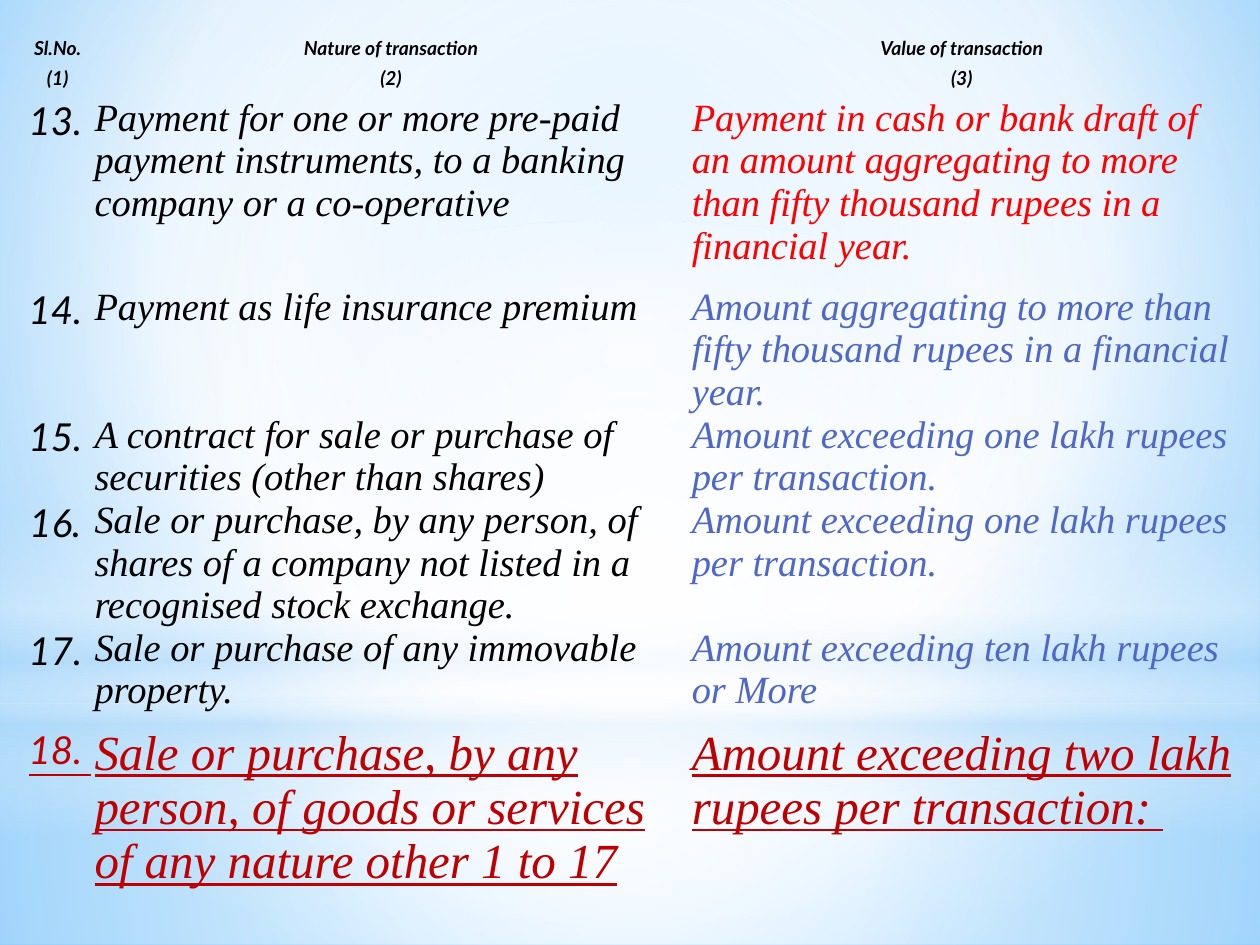
import pptx
import pptx.dml.color
import pptx.enum.shapes
import pptx.enum.text
import pptx.oxml
import pptx.oxml.ns
import pptx.util

Pt = pptx.util.Pt
WIDE, HIGH = 720, 540
SANS, SERIF = "Lato", "Times New Roman"
BLACK, RED, BLUE, DARK = "000000", "FF0000", "4E67C8", "C00000"
PLAIN = "{2D5ABB26-0587-4C30-8999-92F81FD0307C}"
MID = (50, 50, 50, 50)
COLS = (39.6, 341.3, 311)
HEADS = [
    ("Sl.No. ", "Nature of transaction ", "Value of transaction "),
    ("(1) ", "(2) ", "(3) "),
]
ITEMS = [
    ("13. ", "Payment for one or more pre-paid payment instruments, to a banking company or a co-operative",
     "Payment in cash or bank draft of an amount aggregating to more than fifty thousand rupees in a financial year.",
     RED, 108),
    ("14. ", "Payment as life insurance premium",
     "Amount aggregating to more than fifty thousand rupees in a financial year.", BLUE, 63.4),
    ("15. ", "A contract for sale or purchase of securities (other than shares)",
     "Amount exceeding one lakh rupees per transaction.", BLUE, 31.7),
    ("16. ", "Sale or purchase, by any person, of shares of a company not listed in a recognised stock exchange.",
     "Amount exceeding one lakh rupees per transaction.", BLUE, 50.4),
    ("17. ", "Sale or purchase of any immovable property.",
     "Amount exceeding ten lakh rupees or More", BLUE, 56.9),
    ("18. ", "Sale or purchase, by any person, of goods or services of any nature other 1 to 17",
     "Amount exceeding two lakh rupees per transaction: ", DARK, 90),
]


def tint(code):
    """Turn a hex string into a colour."""
    return pptx.dml.color.RGBColor.from_string(code)


def blend(owner, stops, focus=None, angle=0):
    """Rewrite the gradient of an element from (place, colour, opacity) stops."""
    marks = "".join(
        f'<a:gs pos="{place * 1000}"><a:srgbClr val="{code}">'
        f'<a:alpha val="{clear * 1000}"/></a:srgbClr></a:gs>'
        for place, code, clear in stops)
    if focus:
        left, top, right, low = (part * 1000 for part in focus)
        shade = (f'<a:path path="circle"><a:fillToRect l="{left}" t="{top}" '
                 f'r="{right}" b="{low}"/></a:path>')
    else:
        shade = f'<a:lin ang="{angle * 60000}" scaled="0"/>'
    space = pptx.oxml.ns.nsdecls("a")
    fresh = pptx.oxml.parse_xml(
        f'<a:gradFill {space} rotWithShape="1"><a:gsLst>{marks}</a:gsLst>{shade}</a:gradFill>')
    old = owner.find(".//" + pptx.oxml.ns.qn("a:gradFill"))
    old.getparent().replace(old, fresh)


def glow(slide, kind, box, stops, focus=None, angle=0):
    """Place one soft light shape on the layout behind the slide."""
    shape = slide.shapes.add_shape(kind, *map(Pt, box))
    shape.shadow.inherit = False
    shape.line.fill.background()
    shape.fill.gradient()
    blend(shape._element, stops, focus, angle)
    slide.slide_layout.shapes._spTree.append(shape._element)


def sky(slide, left, top, wide, high):
    """Paint the background and its four layers of light."""
    slide.background.fill.gradient()
    blend(slide._element, [(0, "9ED5FF", 100), (60, "FFFFFF", 100), (100, "5BB9FF", 100)],
          (20, 10, 20, 60))
    kinds = pptx.enum.shapes.MSO_SHAPE
    split = 401.8
    glow(slide, kinds.RECTANGLE, (left, top + split, wide, high - split),
         [(0, "FFFFFF", 91), (37, "FFFFFF", 76), (100, "B4DCFA", 79)], MID)
    glow(slide, kinds.RECTANGLE, (left, top, wide, split),
         [(0, "FFFFFF", 89), (48, "FFFFFF", 62), (100, "B4DCFA", 79)], MID)
    glow(slide, kinds.RECTANGLE, (left, top + 296.6, wide, 180),
         [(0, "FFFFFF", 0), (29, "FFFFFF", 30), (45, "B4DCFA", 40),
          (55, "FFFFFF", 26), (65, "B4DCFA", 60), (100, "FFFFFF", 0)], angle=90)
    glow(slide, kinds.OVAL, (left, top + 126, wide, split),
         [(0, "FFFFFF", 100), (56, "FFFFFF", 0)], MID)


def write(cell, text, size, face, code, bold=False, line=False, center=False):
    """Fill one table cell with a single italic run."""
    cell.fill.background()
    cell.margin_left = cell.margin_right = cell.margin_top = cell.margin_bottom = 0
    para = cell.text_frame.paragraphs[0]
    aligns = pptx.enum.text.PP_ALIGN
    para.alignment = aligns.CENTER if center else aligns.LEFT
    run = para.add_run()
    run.text = text
    font = run.font
    font.size, font.name, font.italic = Pt(size), face, True
    font.bold, font.underline = bold, line
    font.color.rgb = tint(code)


def grid(slide, left, top, wide, high):
    """Place the table of transactions."""
    count = len(HEADS) + len(ITEMS)
    table = slide.shapes.add_table(count, len(COLS), Pt(left), Pt(top), Pt(wide), Pt(high)).table
    table.first_row = table.horz_banding = False
    table._tbl.tblPr.find(pptx.oxml.ns.qn("a:tableStyleId")).text = PLAIN
    for col, span in zip(table.columns, COLS):
        col.width = Pt(span)
    for row, texts in enumerate(HEADS):
        table.rows[row].height = Pt(17.3)
        for col, text in enumerate(texts):
            write(table.cell(row, col), text, 11, SANS, BLACK, bold=True, center=True)
    for row, (mark, deal, value, code, tall) in enumerate(ITEMS, len(HEADS)):
        table.rows[row].height = Pt(tall)
        last = code == DARK
        ink, size = (DARK, 28) if last else (BLACK, 22)
        write(table.cell(row, 0), mark, 22, SANS, ink, line=last, center=True)
        write(table.cell(row, 1), deal, size, SERIF, ink, line=last)
        write(table.cell(row, 2), value, size, SERIF, code, line=last)


def main():
    """Build the slide and save it."""
    deck = pptx.Presentation()
    deck.slide_width, deck.slide_height = Pt(WIDE), Pt(HIGH)
    slide = deck.slides.add_slide(deck.slide_layouts[6])
    sky(slide, 0, 0, WIDE, HIGH)
    grid(slide, 14.4, 20.9, sum(COLS), 435)
    deck.save("out.pptx")


if __name__ == "__main__":
    main()
